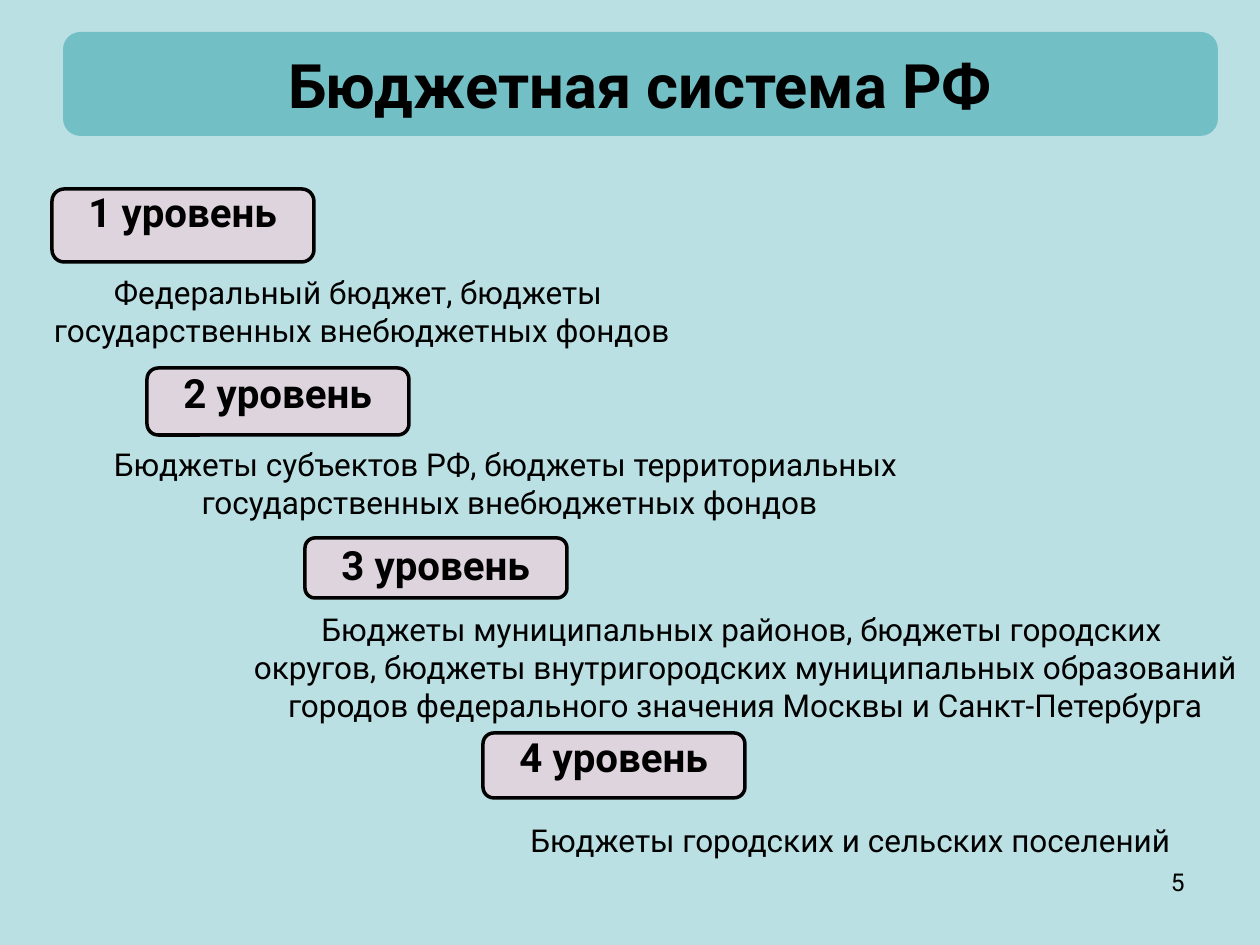
from dataclasses import dataclass
from typing import Any

from pptx import Presentation
from pptx.dml.color import RGBColor
from pptx.enum.shapes import MSO_SHAPE as Preset
from pptx.enum.text import MSO_ANCHOR as Anchor, PP_ALIGN as Align
from pptx.util import Emu, Pt

EMU_PER_PX = 914400 // 126


def px(*lengths):
    return [Emu(length * EMU_PER_PX) for length in lengths]


def color(value):
    return RGBColor.from_string(value)


def write(frame, text, size, font, ink, bold=False, align=Align.CENTER):
    for index, line in enumerate(text.split("\n")):
        paragraph = frame.paragraphs[0] if index == 0 else frame.add_paragraph()
        paragraph.alignment = align
        run = paragraph.add_run()
        run.text = line
        run.font.name = font
        run.font.size = Pt(size)
        run.font.bold = bold
        run.font.color.rgb = color(ink)


@dataclass
class BudgetSlide:
    slide: Any
    font: str = "Roboto"
    ink: str = "000000"
    background: str = "BBE0E3"
    banner: str = "72BFC5"
    badge: str = "DED4DD"

    def fill_background(self):
        fill = self.slide.background.fill
        fill.solid()
        fill.fore_color.rgb = color(self.background)

    def panel(self, box, text, size, fill=None, outlined=False, bold=False, lift=0):
        panel = self.slide.shapes.add_shape(Preset.ROUNDED_RECTANGLE, *px(*box))
        panel.shadow.inherit = False
        if fill:
            panel.fill.solid()
            panel.fill.fore_color.rgb = color(fill)
        else:
            panel.fill.background()
        if outlined:
            panel.line.color.rgb = color(self.ink)
            panel.line.width = Pt(2)
        else:
            panel.line.fill.background()
        frame = panel.text_frame
        frame.word_wrap = False
        frame.vertical_anchor = Anchor.MIDDLE
        frame.margin_top, frame.margin_bottom = px(0, 2 * lift)
        write(frame, text, size, self.font, self.ink, bold)

    def title(self, box, text):
        self.panel(box, text, 35, fill=self.banner, bold=True)

    def level(self, box, text, lift):
        self.panel(box, text, 23, fill=self.badge, outlined=True, bold=True, lift=lift)

    def budgets(self, box, text, lift):
        self.panel(box, text, 18, lift=lift)

    def page_number(self, box, text):
        frame = self.slide.shapes.add_textbox(*px(*box)).text_frame
        frame.word_wrap = True
        write(frame, text, 14, self.font, self.ink, align=Align.RIGHT)


LEVELS = [
    ((52, 189, 262, 73), 14, (52, 273, 620, 84), 4,
     "Федеральный бюджет, бюджеты \nгосударственных внебюджетных фондов"),
    ((147, 368, 262, 67), 9, (147, 441, 725, 84), 0,
     "Бюджеты субъектов РФ, бюджеты территориальных \n"
     "государственных внебюджетных фондов"),
    ((305, 538, 262, 60), 4, (294, 609, 903, 116), 0,
     "Бюджеты муниципальных районов, бюджеты городских \n"
     "округов, бюджеты внутригородских муниципальных образований\n"
     "городов федерального значения Москвы и Санкт-Петербурга"),
    ((483, 733, 262, 65), 9, (483, 819, 735, 42), 0,
     "Бюджеты городских и сельских поселений"),
]


def main():
    deck = Presentation()
    deck.slide_width, deck.slide_height = px(1260, 945)
    page = BudgetSlide(deck.slides.add_slide(deck.slide_layouts[6]))
    page.fill_background()
    page.title((63, 32, 1155, 104), "Бюджетная система РФ")
    for number, (badge, badge_lift, area, area_lift, text) in enumerate(LEVELS, 1):
        page.level(badge, f"{number} уровень", badge_lift)
        page.budgets(area, text, area_lift)
    page.page_number((903, 861, 294, 65), "5")
    deck.save("out.pptx")


if __name__ == "__main__":
    main()
